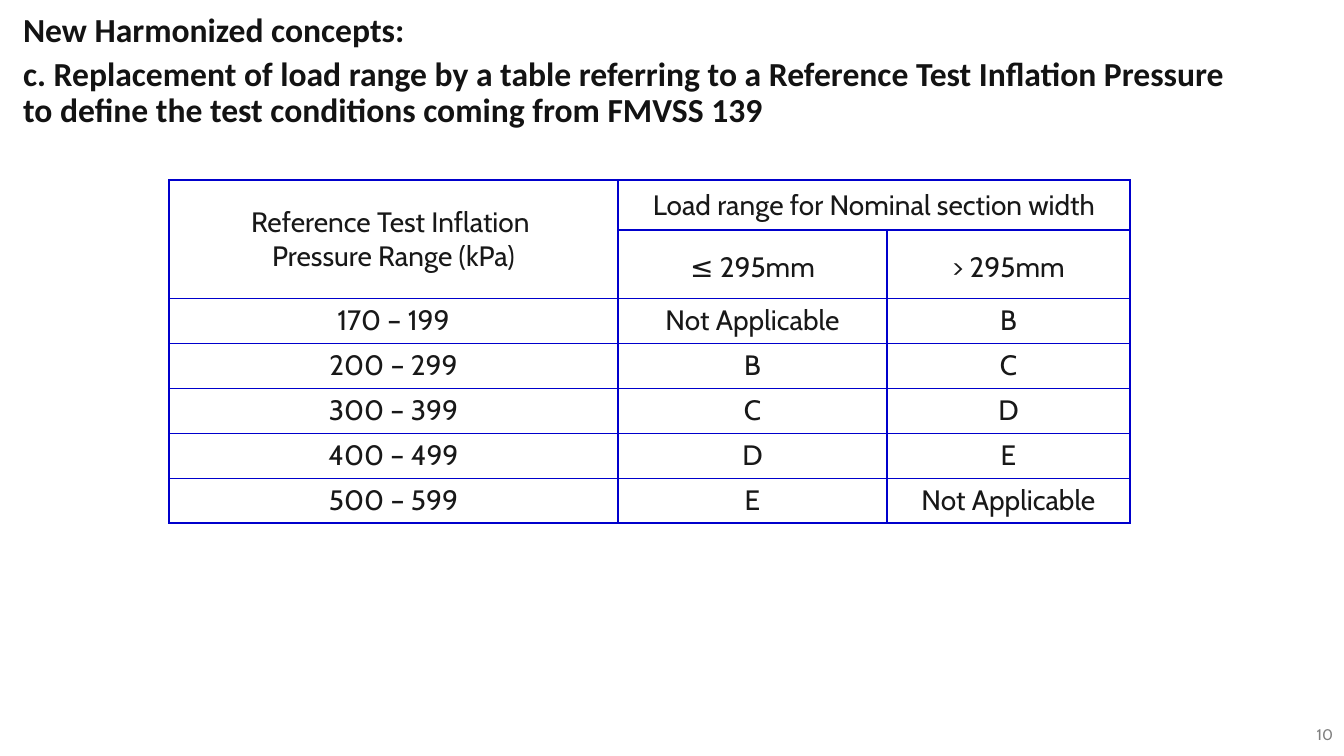
from dataclasses import dataclass

from lxml.etree import SubElement
from pptx import Presentation
from pptx.dml.color import RGBColor
from pptx.enum.text import MSO_ANCHOR, MSO_AUTO_SIZE, PP_ALIGN
from pptx.oxml.ns import qn
from pptx.util import Emu, Pt


@dataclass(frozen=True)
class Theme:
    """Colours, fonts and type sizes of the slide."""
    heading_font: str = "Calibri"
    text_font: str = "Cabin"
    heading: str = "131313"
    text: str = "181818"
    muted: str = "808080"
    border: str = "0000CC"
    heading_size: int = 24
    table_size: int = 20
    number_size: int = 11


THEME = Theme()
HEADERS = [
    ["Reference Test Inflation \vPressure Range (kPa)",
     "Load range for Nominal section width", ""],
    ["", "≤ 295mm", "> 295mm"],
]
LOAD_RANGES = [
    ["170 – 199", "Not Applicable", "B"],
    ["200 – 299", "B", "C"],
    ["300 – 399", "C", "D"],
    ["400 – 499", "D", "E"],
    ["500 – 599", "E", "Not Applicable"],
]
COL_WIDTHS = [449, 269, 243]
ROW_HEIGHTS = [50, 68] + [45] * len(LOAD_RANGES)


def px(n):
    """Turn pixels into EMU."""
    return Emu(round(n * 914400 / 100.8))


def style(p, name, size, color, align, bold=False):
    """Set the font and alignment of a paragraph."""
    p.alignment = align
    p.font.name, p.font.size, p.font.bold = name, Pt(size), bold
    p.font.color.rgb = RGBColor.from_string(color)


def place(sp, x, y, w, h):
    """Move and size a shape."""
    sp.left, sp.top, sp.width, sp.height = px(x), px(y), px(w), px(h)


def fill_heading(sp, text, x, y, w, h):
    """Write a bold left-aligned heading into a placeholder."""
    place(sp, x, y, w, h)
    tf = sp.text_frame
    tf.text = text
    tf.word_wrap = True
    tf.auto_size = MSO_AUTO_SIZE.NONE
    tf.vertical_anchor = MSO_ANCHOR.BOTTOM
    tf.margin_top = tf.margin_bottom = 0
    p = tf.paragraphs[0]
    style(p, THEME.heading_font, THEME.heading_size, THEME.heading,
          PP_ALIGN.LEFT, bold=True)
    p.line_spacing = 0.9
    p.space_before = Pt(0)
    pPr = p._p.get_or_add_pPr()
    pPr.set("marL", "0")
    pPr.set("indent", "0")
    pPr.insert_element_before(pPr.makeelement(qn("a:buNone")),
                              "a:tabLst", "a:defRPr", "a:extLst")


def add_borders(cell):
    """Draw a thin line on every side of a cell."""
    tcPr = cell._tc.get_or_add_tcPr()
    for side in "LRTB":
        ln = SubElement(tcPr, qn(f"a:ln{side}"), w=str(Pt(1)))
        SubElement(SubElement(ln, qn("a:solidFill")), qn("a:srgbClr"),
                   val=THEME.border)


def fill_cell(cell, text, gap, top=0):
    """Write centred text into a bordered, unfilled cell."""
    add_borders(cell)
    cell.fill.background()
    cell.vertical_anchor = MSO_ANCHOR.MIDDLE
    cell.margin_left = cell.margin_right = px(7)
    cell.margin_top, cell.margin_bottom = px(top), 0
    p = cell.text_frame.paragraphs[0]
    p.text = text
    style(p, THEME.text_font, THEME.table_size, THEME.text, PP_ALIGN.CENTER)
    p.space_before = p.space_after = Pt(gap)


def add_load_table(s, x, y):
    """Add the table of load ranges by pressure and section width."""
    rows = HEADERS + LOAD_RANGES
    tbl = s.shapes.add_table(len(rows), len(COL_WIDTHS), px(x), px(y),
                             px(sum(COL_WIDTHS)), px(sum(ROW_HEIGHTS))).table
    tbl.first_row = tbl.horz_banding = False
    for col, w in zip(tbl.columns, COL_WIDTHS):
        col.width = px(w)
    for row, h in zip(tbl.rows, ROW_HEIGHTS):
        row.height = px(h)
    for i, texts in enumerate(rows):
        for j, text in enumerate(texts):
            fill_cell(tbl.cell(i, j), text, gap=4 if i < len(HEADERS) else 2,
                      top=6 if i == 1 else 0)
    tbl.cell(0, 0).merge(tbl.cell(1, 0))
    tbl.cell(0, 1).merge(tbl.cell(0, 2))


def add_page_number(s, number, x, y, w, h):
    """Add the page number in the corner."""
    tf = s.shapes.add_textbox(px(x), px(y), px(w), px(h)).text_frame
    tf.word_wrap = True
    tf.vertical_anchor = MSO_ANCHOR.MIDDLE
    p = tf.paragraphs[0]
    p.text = number
    style(p, THEME.text_font, THEME.number_size, THEME.muted, PP_ALIGN.RIGHT)


def main():
    """Build and save the slide."""
    prs = Presentation()
    prs.slide_width, prs.slide_height = px(1344), px(756)
    s = prs.slides.add_slide(prs.slide_layouts[1])
    fill_heading(s.shapes.title, "New Harmonized concepts:", 13, 12, 983, 38)
    fill_heading(s.placeholders[1],
                 "c. Replacement of load range by a table referring to a "
                 "Reference Test Inflation Pressure to define the test "
                 "conditions coming from FMVSS 139", 13, 56, 1229, 74)
    add_load_table(s, 169, 180)
    add_page_number(s, "10", 1302, 722, 41, 24)
    prs.save("out.pptx")


if __name__ == "__main__":
    main()
